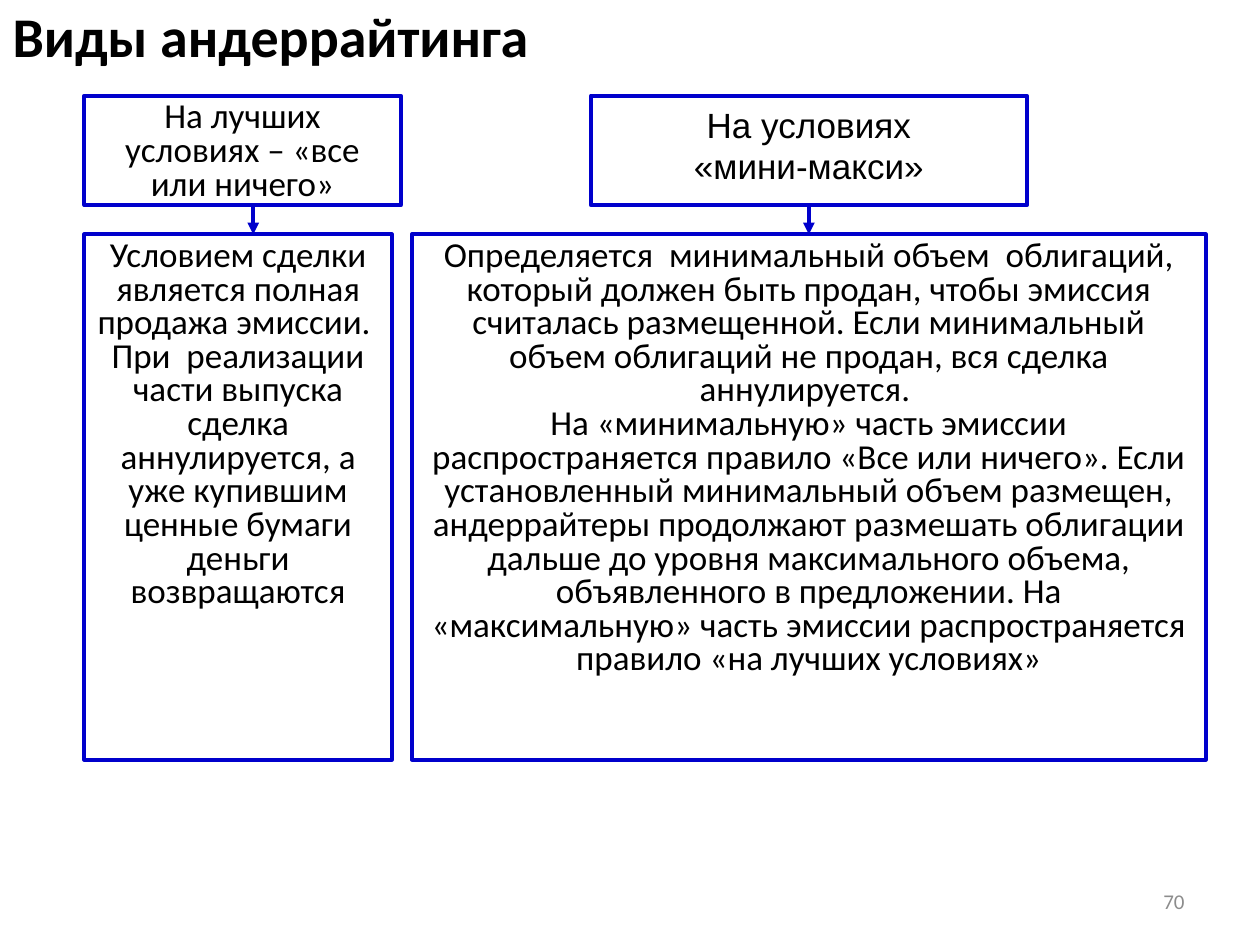
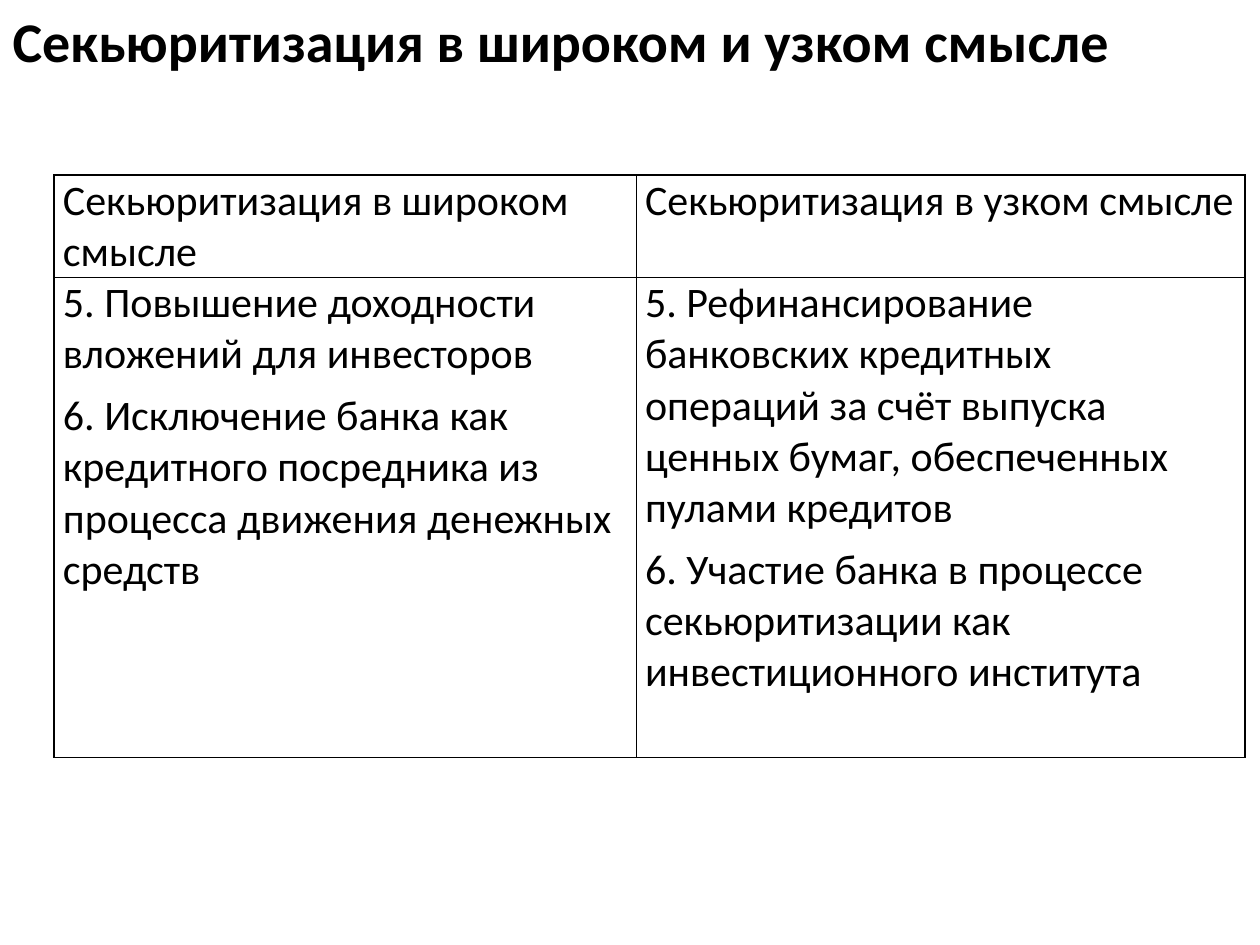
from dataclasses import dataclass

from lxml import etree
from pptx import Presentation
from pptx import util as u
from pptx.dml.color import RGBColor
from pptx.enum import shapes, text
from pptx.oxml import ns


@dataclass(frozen=True)
class Theme:
    font: str = "Calibri"
    alt: str = "Arial"
    ink: str = "000000"
    frame: str = "0000CC"
    gray: str = "8C8C8C"
    title: int = 32
    cell: int = 24
    body: int = 20
    note: int = 12
    line: float = 2.25
    grid: float = 1


LEFT, MID, RIGHT = text.PP_ALIGN.LEFT, text.PP_ALIGN.CENTER, text.PP_ALIGN.RIGHT
TOP, CENTER = text.MSO_ANCHOR.TOP, text.MSO_ANCHOR.MIDDLE


def child(node, tag, **attrs):
    return etree.SubElement(node, ns.qn(tag), **attrs)


class Deck:
    def __init__(self, theme):
        self.theme = theme
        self.prs = Presentation()
        self.prs.slide_width, self.prs.slide_height = u.Inches(10), u.Inches(7.5)
        self.slide = None

    def label(self, frame, lines, size, align=LEFT, anchor=TOP, font=None,
              color=None, bold=False, space=None, gap=0):
        """Fill a text frame, one paragraph per line, and format it."""
        frame.text = "\n".join(lines)
        frame.word_wrap = True
        frame.vertical_anchor = anchor
        for para in frame.paragraphs:
            para.alignment = align
            para.space_before = para.space_after = u.Pt(gap)
            if space:
                para.line_spacing = space
            for run in para.runs:
                run.font.name = font or self.theme.font
                run.font.size = u.Pt(size)
                run.font.bold = bold
                run.font.color.rgb = RGBColor.from_string(color or self.theme.ink)

    def page(self, title, top, height, space=None):
        """Start a slide with a bold title at the upper left."""
        self.slide = self.prs.slides.add_slide(self.prs.slide_layouts[5])
        head = self.slide.shapes.title
        head.left, head.top = u.Inches(0), u.Inches(top)
        head.width, head.height = u.Inches(9), u.Inches(height)
        self.label(head.text_frame, [title], self.theme.title, bold=True, space=space)
        head.text_frame.auto_size = text.MSO_AUTO_SIZE.NONE

    def number(self, digits):
        box = self.slide.shapes.add_textbox(*map(u.Inches, (7.17, 6.95, 2.33, 0.4)))
        self.label(box.text_frame, [digits], self.theme.note, RIGHT, CENTER,
                   color=self.theme.gray)

    def box(self, left, top, width, height, lines, **style):
        """Draw an outlined box with centred text."""
        rect = self.slide.shapes.add_shape(
            shapes.MSO_SHAPE.RECTANGLE, *map(u.Inches, (left, top, width, height)))
        rect.shadow.inherit = False
        rect.fill.background()
        self.stroke(rect.line)
        self.label(rect.text_frame, lines, self.theme.body, MID, **style)
        return rect

    def stroke(self, line):
        line.color.rgb = RGBColor.from_string(self.theme.frame)
        line.width = u.Pt(self.theme.line)

    def arrow(self, x, start, end):
        """Draw a downward arrow."""
        link = self.slide.shapes.add_connector(
            shapes.MSO_CONNECTOR.STRAIGHT, *map(u.Inches, (x, start, x, end)))
        self.stroke(link.line)
        props = link._element.spPr
        child(props.find(ns.qn("a:ln")), "a:tailEnd", type="triangle")
        child(props, "a:effectLst")

    def border(self, cell):
        props = cell._tc.get_or_add_tcPr()
        for side in "LRTB":
            line = child(props, "a:ln" + side, w=str(u.Pt(self.theme.grid)))
            child(child(line, "a:solidFill"), "a:srgbClr", val=self.theme.ink)

    def table(self, left, top, widths, heights, rows):
        """Draw a plain ruled table; each cell is a list of paragraphs."""
        grid = self.slide.shapes.add_table(
            len(rows), len(widths), u.Inches(left), u.Inches(top),
            u.Inches(sum(widths)), u.Inches(sum(heights))).table
        grid.first_row = grid.horz_banding = False
        for col, width in zip(grid.columns, widths):
            col.width = u.Inches(width)
        for row, height, cells in zip(grid.rows, heights, rows):
            row.height = u.Inches(height)
            for cell, lines in zip(row.cells, cells):
                cell.margin_left = cell.margin_right = u.Inches(0.07)
                cell.margin_top = cell.margin_bottom = 0
                self.border(cell)
                cell.fill.background()
                self.label(cell.text_frame, lines, self.theme.cell, gap=3)


def kinds(deck):
    """Two kinds of underwriting, each with its terms below."""
    deck.page("Виды андеррайтинга", 0.02, 0.5, space=0.9)
    deck.number("70")
    head, body, tall, deep = 0.76, 1.86, 0.87, 4.17

    # Headings
    deck.box(0.67, head, 2.51, tall, ["На лучших условиях – «все или ничего»"], space=0.8)
    mini = deck.box(4.69, head, 3.46, tall, ["На условиях", "«мини-макси»"],
                    font=deck.theme.alt, anchor=CENTER)
    mini.text_frame.paragraphs[0].line_spacing = 0.7

    # Terms
    deck.box(3.27, body, 6.3, deep, [
        "Определяется  минимальный объем  облигаций, который должен быть продан, "
        "чтобы эмиссия считалась размещенной. Если минимальный объем облигаций "
        "не продан, вся сделка аннулируется. ",
        "На «минимальную» часть эмиссии распространяется правило «Все или ничего». "
        "Если установленный минимальный объем размещен, андеррайтеры продолжают "
        "размешать облигации дальше до уровня максимального объема, объявленного "
        "в предложении. На «максимальную» часть эмиссии распространяется правило "
        "«на лучших условиях»"], space=0.8)
    deck.box(0.67, body, 2.44, deep, [
        "Условием сделки является полная продажа эмиссии. ",
        "При  реализации части выпуска сделка аннулируется, а уже купившим "
        "ценные бумаги деньги возвращаются"], space=0.8)

    # Links from heading to terms
    for x in (2.01, 6.42):
        deck.arrow(x, head + tall, body)


def senses(deck):
    """Securitisation in the broad and the narrow sense."""
    deck.page("Секьюритизация в широком и узком смысле", 0, 1.25)
    deck.table(0.43, 1.39, (4.62, 4.83), (0.81, 3.81), [
        [["Секьюритизация в широком смысле"], ["Секьюритизация в узком смысле"]],
        [["5. Повышение доходности вложений для инвесторов",
          "6. Исключение банка как кредитного посредника из процесса движения "
          "денежных средств"],
         ["5. Рефинансирование банковских кредитных операций за счёт выпуска "
          "ценных бумаг, обеспеченных пулами кредитов",
          "6. Участие банка в процессе секьюритизации как инвестиционного института"]],
    ])


def main():
    deck = Deck(Theme())
    kinds(deck)
    senses(deck)
    deck.prs.save("out.pptx")


if __name__ == "__main__":
    main()
